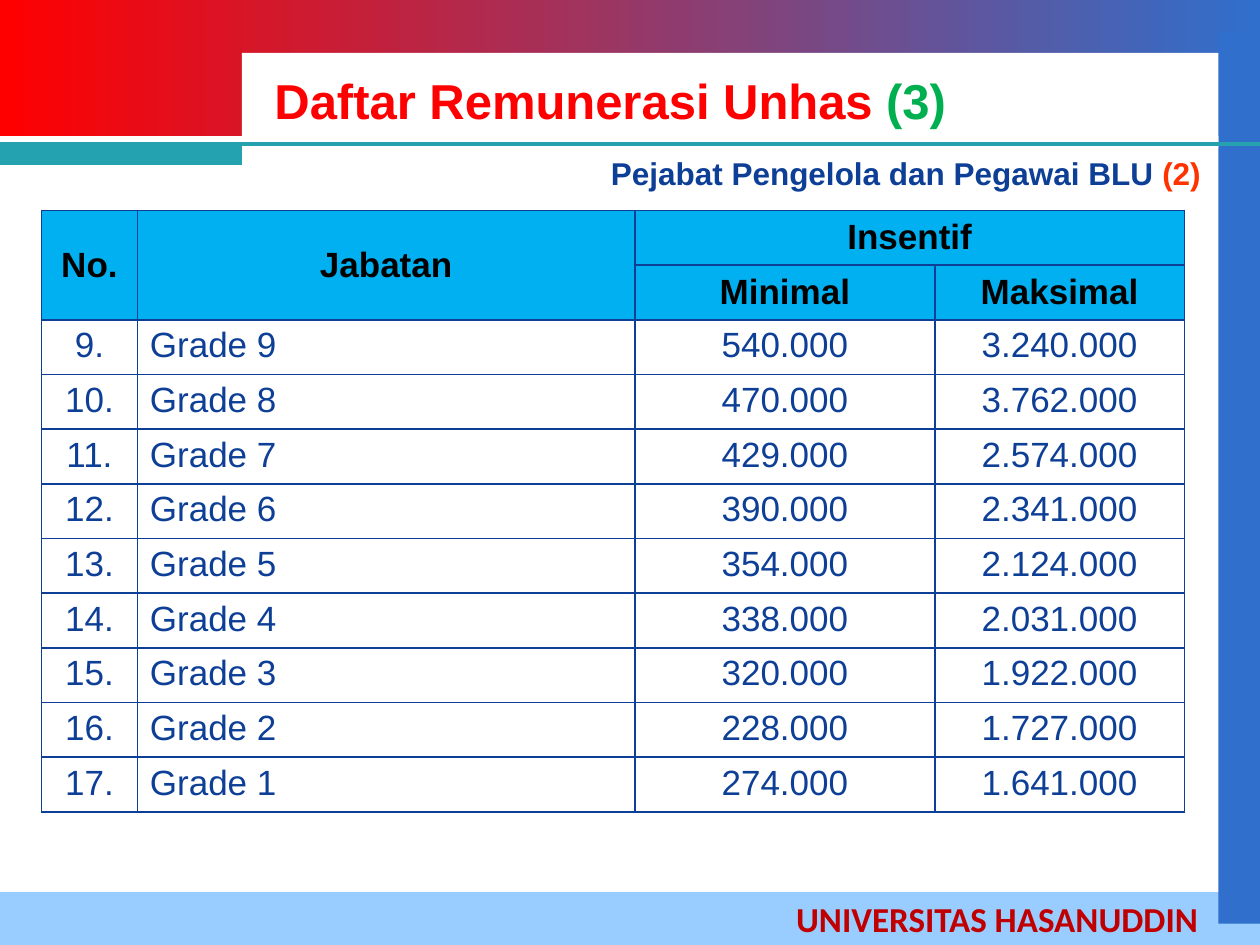
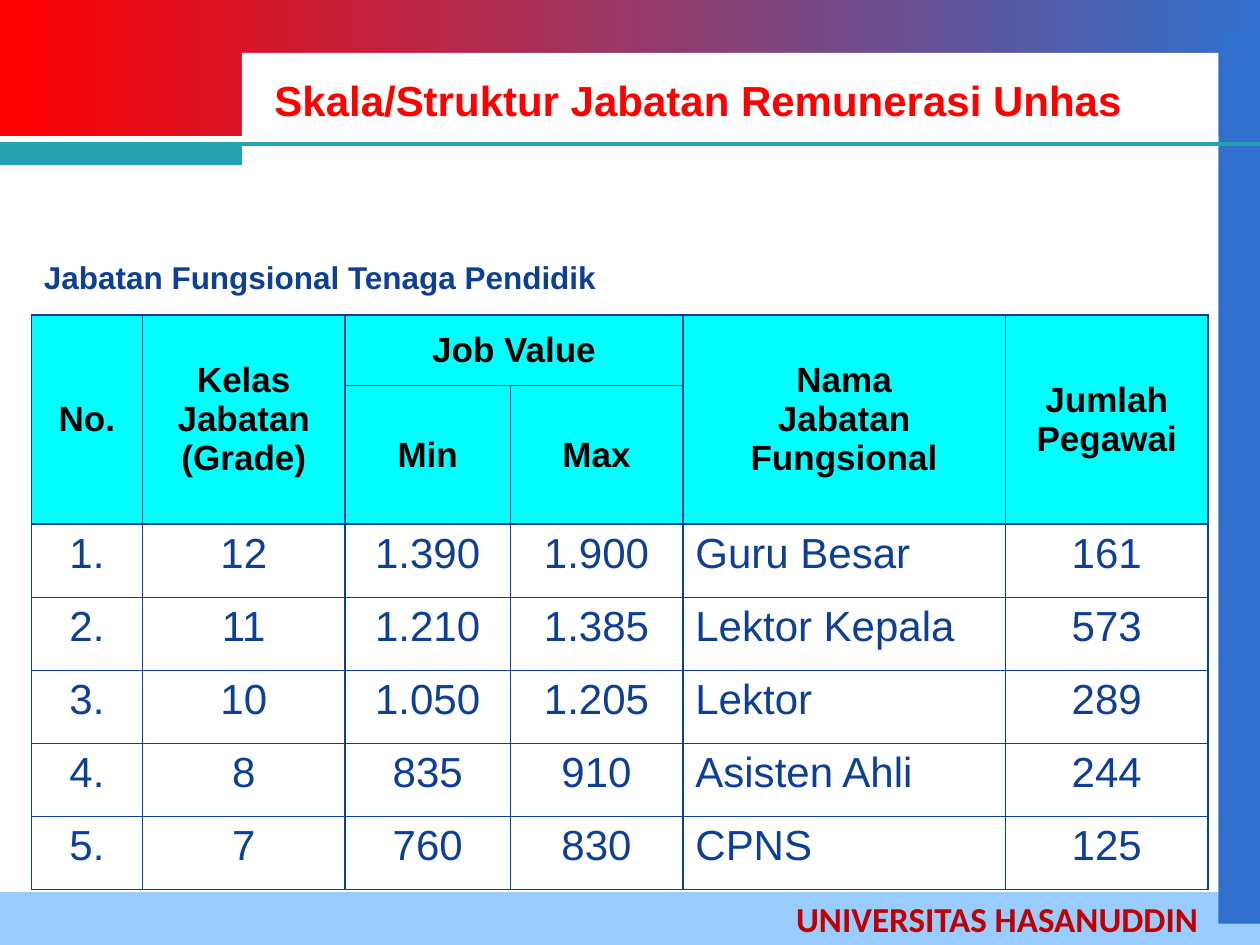
from lxml.etree import SubElement
from pptx import Presentation
from pptx.dml.color import RGBColor
from pptx.enum.shapes import MSO_CONNECTOR, MSO_SHAPE
from pptx.enum.text import MSO_ANCHOR, PP_ALIGN
from pptx.oxml import parse_xml
from pptx.oxml.ns import nsdecls, qn
from pptx.util import Inches, Pt

RED = RGBColor(0xFF, 0x00, 0x00)
DARK_RED = RGBColor(0xC0, 0x00, 0x00)
ORANGE = RGBColor(0xFF, 0x33, 0x00)
GREEN = RGBColor(0x00, 0xB0, 0x50)
BLUE = RGBColor(0x30, 0x6F, 0xCC)
NAVY = RGBColor(0x0E, 0x3F, 0x96)
PALE_BLUE = RGBColor(0x99, 0xCC, 0xFF)
SKY = RGBColor(0x00, 0xB0, 0xF0)
CYAN = RGBColor(0x00, 0xFF, 0xFF)
TEAL = RGBColor(0x25, 0xA2, 0xAF)
WHITE = RGBColor(0xFF, 0xFF, 0xFF)
BLACK = RGBColor(0x00, 0x00, 0x00)

GRADES = [
    ("540.000", "3.240.000"), ("470.000", "3.762.000"), ("429.000", "2.574.000"),
    ("390.000", "2.341.000"), ("354.000", "2.124.000"), ("338.000", "2.031.000"),
    ("320.000", "1.922.000"), ("228.000", "1.727.000"), ("274.000", "1.641.000"),
]
POSITIONS = [
    ("12", "1.390", "1.900", "Guru Besar", "161"),
    ("11", "1.210", "1.385", "Lektor Kepala", "573"),
    ("10", "1.050", "1.205", "Lektor", "289"),
    ("8", "835", "910", "Asisten Ahli", "244"),
    ("7", "760", "830", "CPNS", "125"),
]


class DeckBuilder:
    """Holds the deck style and the slide being built."""

    def __init__(self):
        self.deck = Presentation()
        self.deck.slide_width = Inches(10)
        self.deck.slide_height = Inches(7.5)
        self.page = None

    def start_page(self, title, size):
        self.page = self.deck.slides.add_slide(self.deck.slide_layouts[6])
        header = self.band(0, 0, 10, 1.08, RED)
        header.fill.gradient()
        header.fill.gradient_angle = 0
        for stop, color in zip(header.fill.gradient_stops, (RED, BLUE)):
            stop.color.rgb = color
        self.band(0, 7.08, 10, 0.42, PALE_BLUE)
        self.band(9.67, 0.25, 0.33, 7.08, BLUE)
        self.band(1.92, 0.42, 7.75, 0.75, WHITE)
        self.rule(0, 1.14, 10, TEAL)
        self.band(0, 1.14, 1.92, 0.17, TEAL)
        footer = self.text(6.22, 7.07, 3.42, 0.44,
                           [("UNIVERSITAS HASANUDDIN", DARK_RED)], 20, "Calibri")
        self.shadow(footer)
        heading = self.text(2.08, 0.5, 7.5, 0.58, title, size)
        heading.text_frame.word_wrap = True
        heading.text_frame.vertical_anchor = MSO_ANCHOR.MIDDLE

    def band(self, left, top, width, height, color):
        shape = self.page.shapes.add_shape(
            MSO_SHAPE.RECTANGLE, Inches(left), Inches(top), Inches(width), Inches(height))
        shape.shadow.inherit = False
        shape.fill.solid()
        shape.fill.fore_color.rgb = color
        shape.line.fill.background()
        return shape

    def rule(self, left, top, width, color):
        line = self.page.shapes.add_connector(
            MSO_CONNECTOR.STRAIGHT, Inches(left), Inches(top), Inches(left + width), Inches(top))
        line.line.color.rgb = color
        line.line.width = Pt(2.25)
        SubElement(line._element.spPr, qn("a:effectLst"))

    def text(self, left, top, width, height, spans, size, font="Arial"):
        box = self.page.shapes.add_textbox(
            Inches(left), Inches(top), Inches(width), Inches(height))
        box.text_frame.word_wrap = False
        for words, color in spans:
            self.span(box.text_frame.paragraphs[0], words, size, color, True, font)
        return box

    def span(self, para, words, size, color, bold, font="Arial"):
        span = para.add_run()
        span.text = words
        span.font.name = font
        span.font.size = Pt(size)
        span.font.bold = bold
        span.font.color.rgb = color

    def shadow(self, box):
        span = box.text_frame.paragraphs[0].runs[0]
        effect = parse_xml(
            f'<a:effectLst {nsdecls("a")}><a:outerShdw blurRad="38100" dist="38100" dir="2700000">'
            '<a:srgbClr val="000000"><a:alpha val="43000"/></a:srgbClr></a:outerShdw></a:effectLst>')
        span.font._element.find(qn("a:solidFill")).addnext(effect)

    def table(self, left, top, widths, heights, header, body, merges, left_column,
              header_fill, body_size):
        rows = header + body
        frame = self.page.shapes.add_table(
            len(rows), len(widths), Inches(left), Inches(top),
            Inches(sum(widths)), Inches(sum(heights)))
        table = frame.table
        table.first_row = table.horz_banding = False
        for column, width in zip(table.columns, widths):
            column.width = Inches(width)
        for row, height in zip(table.rows, heights):
            row.height = Inches(height)
        for first_row, first_column, last_row, last_column in merges:
            table.cell(first_row, first_column).merge(table.cell(last_row, last_column))
        for row_index, row in enumerate(rows):
            is_header = row_index < len(header)
            for column_index, words in enumerate(row):
                cell = table.cell(row_index, column_index)
                centred = is_header or column_index != left_column
                self.border(cell)
                cell.fill.solid()
                cell.fill.fore_color.rgb = header_fill if is_header else WHITE
                if is_header:
                    cell.vertical_anchor = MSO_ANCHOR.MIDDLE
                if words:
                    self.fill_cell(cell, words, 20 if is_header else body_size,
                                   is_header, centred)

    def fill_cell(self, cell, words, size, is_header, centred):
        frame = cell.text_frame
        for index, line in enumerate(words.split("\n")):
            para = frame.add_paragraph() if index else frame.paragraphs[0]
            para.alignment = PP_ALIGN.CENTER if centred else PP_ALIGN.LEFT
            self.span(para, line, size, BLACK if is_header else NAVY, is_header)

    def border(self, cell):
        properties = cell._tc.get_or_add_tcPr()
        for side in ("lnL", "lnR", "lnT", "lnB"):
            properties.append(parse_xml(
                f'<a:{side} {nsdecls("a")} w="{Pt(1)}"><a:solidFill>'
                f'<a:srgbClr val="{NAVY}"/></a:solidFill></a:{side}>'))


def add_remuneration(builder):
    builder.start_page([("Daftar Remunerasi Unhas ", RED), ("(3)", GREEN)], 28)
    header = [("No.", "Jabatan", "Insentif", ""), ("", "", "Minimal", "Maksimal")]
    body = [(f"{index + 9}.", f"Grade {9 - index}", *amounts)
            for index, amounts in enumerate(GRADES)]
    builder.table(0.33, 1.67, [0.76, 3.95, 2.38, 1.98], [0.41] * 11, header, body,
                  [(0, 0, 1, 0), (0, 1, 1, 1), (0, 2, 0, 3)], 1, SKY, 20)
    builder.text(4.75, 1.17, 4.93, 0.4,
                 [("Pejabat Pengelola dan Pegawai BLU ", NAVY), ("(2)", ORANGE)], 18)


def add_positions(builder):
    builder.start_page([("Skala/Struktur Jabatan Remunerasi Unhas", RED)], 24)
    header = [
        ("No.", "Kelas\nJabatan (Grade)", "Job Value", "",
         "Nama\nJabatan Fungsional", "Jumlah\nPegawai"),
        ("", "", "Min", "Max", "", ""),
    ]
    body = [(f"{number}.", *values) for number, values in enumerate(POSITIONS, 1)]
    merges = [(0, column, 1, column) for column in (0, 1, 4, 5)] + [(0, 2, 0, 3)]
    builder.table(0.25, 2.5, [0.88, 1.61, 1.31, 1.37, 2.56, 1.61],
                  [0.56, 1.03] + [0.58] * 5, header, body, merges, 4, CYAN, 24)
    builder.text(0.25, 2, 4.63, 0.4, [("Jabatan Fungsional Tenaga Pendidik", NAVY)], 18)


def main():
    builder = DeckBuilder()
    add_remuneration(builder)
    add_positions(builder)
    builder.deck.save("out.pptx")


if __name__ == "__main__":
    main()
